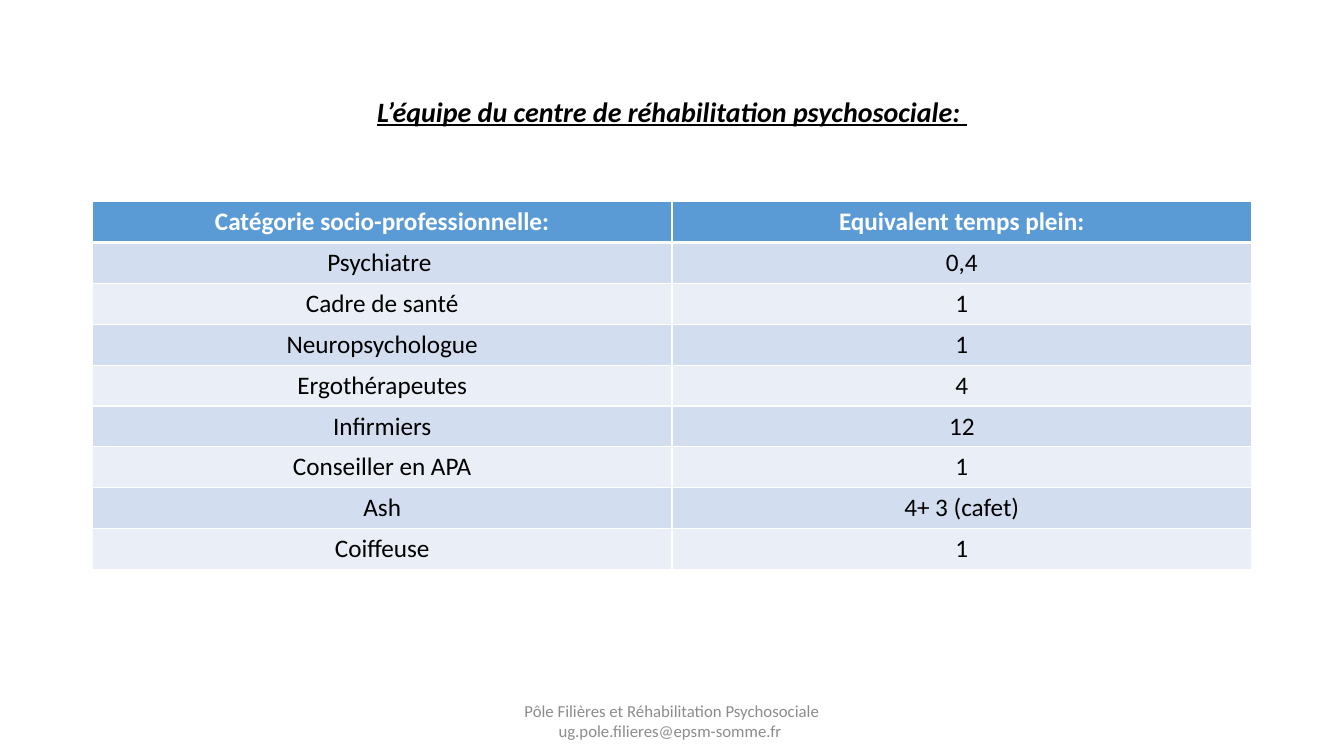
from lxml import etree
from pptx import Presentation, util as u
from pptx.dml.color import RGBColor
from pptx.enum import text
from pptx.oxml import ns

TEAM = [
    ("Catégorie socio-professionnelle:", "Equivalent temps plein:"),
    ("Psychiatre ", "0,4"),
    ("Cadre de santé", "1"),
    ("Neuropsychologue", "1"),
    ("Ergothérapeutes", "4"),
    ("Infirmiers", "12"),
    ("Conseiller en APA", "1"),
    ("Ash", "4+ 3 (cafet)"),
    ("Coiffeuse", "1"),
]


def colour(value):
    return RGBColor.from_string(value)


class TeamSlide:
    """Holds the style and the current slide, and adds its elements."""

    font_name = "Calibri"
    header_fill = "5B9BD5"
    band_fills = ("EAEFF7", "D2DEEF")
    border = "FFFFFF"

    def __init__(self, presentation):
        self.slide = presentation.slides.add_slide(presentation.slide_layouts[5])

    def fill_frame(self, frame, content, hex_colour, **formats):
        frame.word_wrap = True
        paragraph = frame.paragraphs[0]
        paragraph.alignment = text.PP_ALIGN.CENTER
        run = paragraph.add_run()
        run.text = content
        run.font.color.rgb = colour(hex_colour)
        for name, value in {"name": self.font_name, **formats}.items():
            setattr(run.font, name, value)
        return paragraph

    def add_title(self, content, box):
        title = self.slide.shapes.title
        for name, value in zip(("left", "top", "width", "height"), box):
            setattr(title, name, u.Cm(value))
        title.text_frame.vertical_anchor = text.MSO_ANCHOR.MIDDLE
        paragraph = self.fill_frame(title.text_frame, content, "000000", size=u.Pt(20),
                                    bold=True, italic=True, underline=True)
        paragraph.line_spacing = 0.9

    def add_text(self, content, box):
        shape = self.slide.shapes.add_textbox(*map(u.Cm, box))
        shape.text_frame.vertical_anchor = text.MSO_ANCHOR.MIDDLE
        self.fill_frame(shape.text_frame, content, "8C8C8C", size=u.Pt(12))

    def add_border(self, cell, side, points):
        properties = cell._tc.get_or_add_tcPr()
        line = etree.SubElement(properties, ns.qn(f"a:{side}"), w=str(u.Pt(points)))
        fill = etree.SubElement(line, ns.qn("a:solidFill"))
        etree.SubElement(fill, ns.qn("a:srgbClr"), val=self.border)

    def add_table(self, rows, box):
        frame = self.slide.shapes.add_table(len(rows), len(rows[0]), *map(u.Cm, box))
        for row, values in enumerate(rows):
            header = row == 0
            for column, value in enumerate(values):
                cell = frame.table.cell(row, column)
                for side in ("lnL", "lnR", "lnT", "lnB"):
                    heavy = (row, side) in ((0, "lnB"), (1, "lnT"))
                    self.add_border(cell, side, 3 if heavy else 1)
                cell.fill.solid()
                cell.fill.fore_color.rgb = colour(
                    self.header_fill if header else self.band_fills[row % 2])
                self.fill_frame(cell.text_frame, value,
                                "FFFFFF" if header else "000000",
                                size=u.Pt(18), bold=header)


def main():
    presentation = Presentation()
    presentation.slide_width = u.Cm(33.87)
    presentation.slide_height = u.Cm(19.05)
    team = TeamSlide(presentation)
    team.add_title("L’équipe du centre de réhabilitation psychosociale: ",
                   (2.33, 1.01, 29.21, 3.68))
    team.add_table(TEAM, (2.33, 5.08, 29.21, 9.27))
    team.add_text("Pôle Filières et Réhabilitation Psychosociale "
                  "ug.pole.filieres@epsm-somme.fr ", (11.22, 17.66, 11.43, 1.01))
    presentation.save("out.pptx")


if __name__ == "__main__":
    main()
